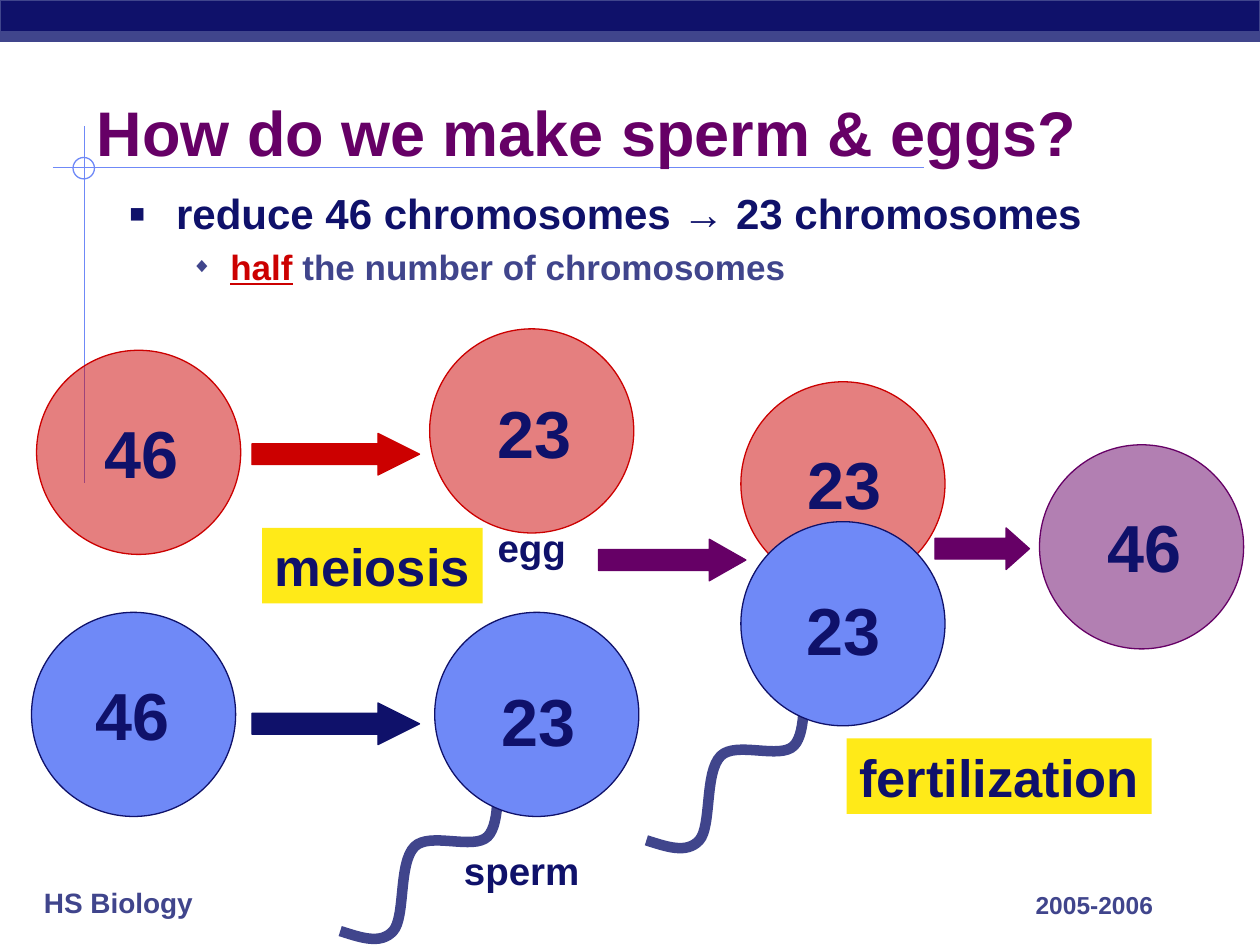
from pptx import Presentation
from pptx.dml.color import RGBColor
from pptx.enum import shapes, text
from pptx.oxml.ns import qn
from pptx.util import Inches, Pt
from lxml import etree

NAVY, SLATE, SKY = "0F116A", "40458C", "6F89F7"
RED, PLUM, GOLD = "CC0000", "660066", "FFEA18"
KIND = shapes.MSO_SHAPE
ALIGN, ANCHOR = text.PP_ALIGN, text.MSO_ANCHOR
ink = RGBColor.from_string


def paint(shape, fill, line, width=0.75, alpha=None):
    shape.shadow.inherit = False
    if fill:
        shape.fill.solid()
        shape.fill.fore_color.rgb = ink(fill)
        if alpha:
            hue = shape.fill._xPr.find(".//" + qn("a:srgbClr"))
            etree.SubElement(hue, qn("a:alpha"), val=str(alpha * 1000))
    else:
        shape.fill.background()
    if line:
        shape.line.color.rgb = ink(line)
        shape.line.width = Pt(width)
    else:
        shape.line.fill.background()


def write(shape, words, size, hue, align=ALIGN.CENTER, anchor=ANCHOR.MIDDLE, wrap=False):
    frame = shape.text_frame
    frame.word_wrap = wrap
    frame.vertical_anchor = anchor
    para = frame.paragraphs[0]
    para.alignment = align
    run = para.add_run()
    run.text = words
    run.font.name = "Arial"
    run.font.size = Pt(size)
    run.font.bold = True
    run.font.color.rgb = ink(hue)


deck = Presentation()
deck.slide_width, deck.slide_height = Inches(10), Inches(7.5)
slide = deck.slides.add_slide(deck.slide_layouts[6])
items = slide.shapes

for ends in [(0.42, 1.33, 7.33, 1.33), (0.67, 1, 0.67, 3.83)]:
    rule = items.add_connector(shapes.MSO_CONNECTOR.STRAIGHT, *map(Inches, ends))
    rule.line.color.rgb = ink(SKY)
    rule.line.width = Pt(1)
    etree.SubElement(rule._element.spPr, qn("a:effectLst"))

for kind, place, fill, line in [
    (KIND.OVAL, (0.58, 1.25, 0.17, 0.17), None, SKY),
    (KIND.RECTANGLE, (0, 0, 10, 0.33), NAVY, SLATE),
    (KIND.RECTANGLE, (0, 0.25, 10, 0.08), SLATE, SLATE),
]:
    paint(items.add_shape(kind, *map(Inches, place)), fill, line)

for words, place, size, hue, align, anchor, wrap in [
    ("HS Biology", (0.25, 6.98, 1.58, 0.37), 16, SLATE, ALIGN.LEFT, ANCHOR.MIDDLE, True),
    ("2005-2006", (7.58, 6.85, 1.67, 0.5), 14, SLATE, ALIGN.RIGHT, ANCHOR.BOTTOM, True),
    ("How do we make sperm & eggs?", (0.67, 0.63, 8.5, 0.83), 36, PLUM, ALIGN.LEFT, ANCHOR.MIDDLE, True),
    ("egg", (3.85, 4.11, 0.74, 0.47), 22, NAVY, ALIGN.CENTER, ANCHOR.MIDDLE, False),
    ("sperm", (3.58, 6.67, 1.12, 0.47), 22, NAVY, ALIGN.CENTER, ANCHOR.MIDDLE, False),
]:
    write(items.add_textbox(*map(Inches, place)), words, size, hue, align, anchor, wrap)

body = items.add_textbox(Inches(0.92), Inches(1.44), Inches(8.5), Inches(1.33)).text_frame
body.word_wrap = True
for level, (left, hang, mark, scale, tint, size, runs) in enumerate([
    (0.38, 0.38, "▪", 120, NAVY, 24, [("reduce 46 chromosomes → 23 chromosomes", NAVY, False)]),
    (0.81, 0.31, "◆", 60, SLATE, 20, [("half", RED, True), (" the number of chromosomes", SLATE, False)]),
]):
    para = body.add_paragraph() if level else body.paragraphs[0]
    para.level = level
    para.space_before = Pt(size * 0.2)
    props = para._p.get_or_add_pPr()
    props.set("marL", str(Inches(left)))
    props.set("indent", str(-Inches(hang)))
    color = etree.SubElement(props, qn("a:buClr"))
    etree.SubElement(color, qn("a:srgbClr"), val=tint)
    etree.SubElement(props, qn("a:buSzPct"), val=str(scale * 1000))
    etree.SubElement(props, qn("a:buFont"), typeface="Arial")
    etree.SubElement(props, qn("a:buChar"), char=mark)
    for words, hue, under in runs:
        run = para.add_run()
        run.text = words
        run.font.name = "Arial"
        run.font.size = Pt(size)
        run.font.bold = True
        run.font.underline = under
        run.font.color.rgb = ink(hue)

for left, top, width, head, hue in [
    (7.42, 4.19, 0.75, 0.56, PLUM),
    (2, 3.44, 1.33, 1, RED),
    (2, 5.58, 1.33, 1, NAVY),
    (4.75, 4.28, 1.17, 0.88, PLUM),
]:
    arrow = items.add_shape(KIND.RIGHT_ARROW, Inches(left), Inches(top), Inches(width), Inches(0.33))
    arrow.adjustments[0], arrow.adjustments[1] = 0.5, head
    paint(arrow, hue, hue)

for words, left, top, width in [("meiosis", 2.08, 4.19, 1.75), ("fertilization", 6.72, 5.86, 2.42)]:
    tag = items.add_shape(KIND.RECTANGLE, Inches(left), Inches(top), Inches(width), Inches(0.6))
    paint(tag, GOLD, None)
    write(tag, words, 30, NAVY)

tail = [
    (0.5, 1.11), (0.51, 1.1), (0.52, 1.08), (0.5, 1.2),
    (0.49, 1.31), (0.53, 1.67), (0.42, 1.78),
    (0.31, 1.89), (-0.04, 1.74), (-0.16, 1.86),
    (-0.29, 1.99), (-0.23, 2.42), (-0.33, 2.53),
    (-0.43, 2.64), (-0.59, 2.58), (-0.75, 2.53),
]
for left, top, count, dx, dy, fill, line, alpha, swims in [
    (3.41, 2.61, "23", 0.44, 0.45, RED, RED, 50, False),
    (3.45, 4.86, "23", 0.43, 0.49, SKY, NAVY, None, True),
    (0.25, 4.86, "46", 0.41, 0.44, SKY, NAVY, None, False),
    (0.29, 2.78, "46", 0.44, 0.44, RED, RED, 50, False),
    (8.25, 3.53, "46", 0.44, 0.44, PLUM, PLUM, 50, False),
    (5.88, 3.03, "23", 0.43, 0.44, RED, RED, 50, False),
    (5.88, 4.14, "23", 0.42, 0.49, SKY, NAVY, None, True),
]:
    cell = items.add_group_shape().shapes
    if swims:
        spots = [(Inches(left + x), Inches(top + y)) for x, y in tail]
        pen = cell.build_freeform(*spots[0])
        pen.add_line_segments(spots[1:], close=False)
        whip = pen.convert_to_shape()
        paint(whip, None, SLATE, 6)
        steps = list(whip._element.iter(qn("a:lnTo")))
        route = steps[0].getparent()
        for start in range(0, len(steps), 3):
            curve = etree.SubElement(route, qn("a:cubicBezTo"))
            for step in steps[start:start + 3]:
                curve.append(step[0])
                route.remove(step)
    disc = cell.add_shape(KIND.OVAL, Inches(left), Inches(top), Inches(1.62), Inches(1.62))
    paint(disc, fill, line, alpha=alpha)
    label = cell.add_textbox(Inches(left + dx), Inches(top + dy), Inches(0.79), Inches(0.73))
    write(label, count, 38, NAVY)

deck.save("out.pptx")
